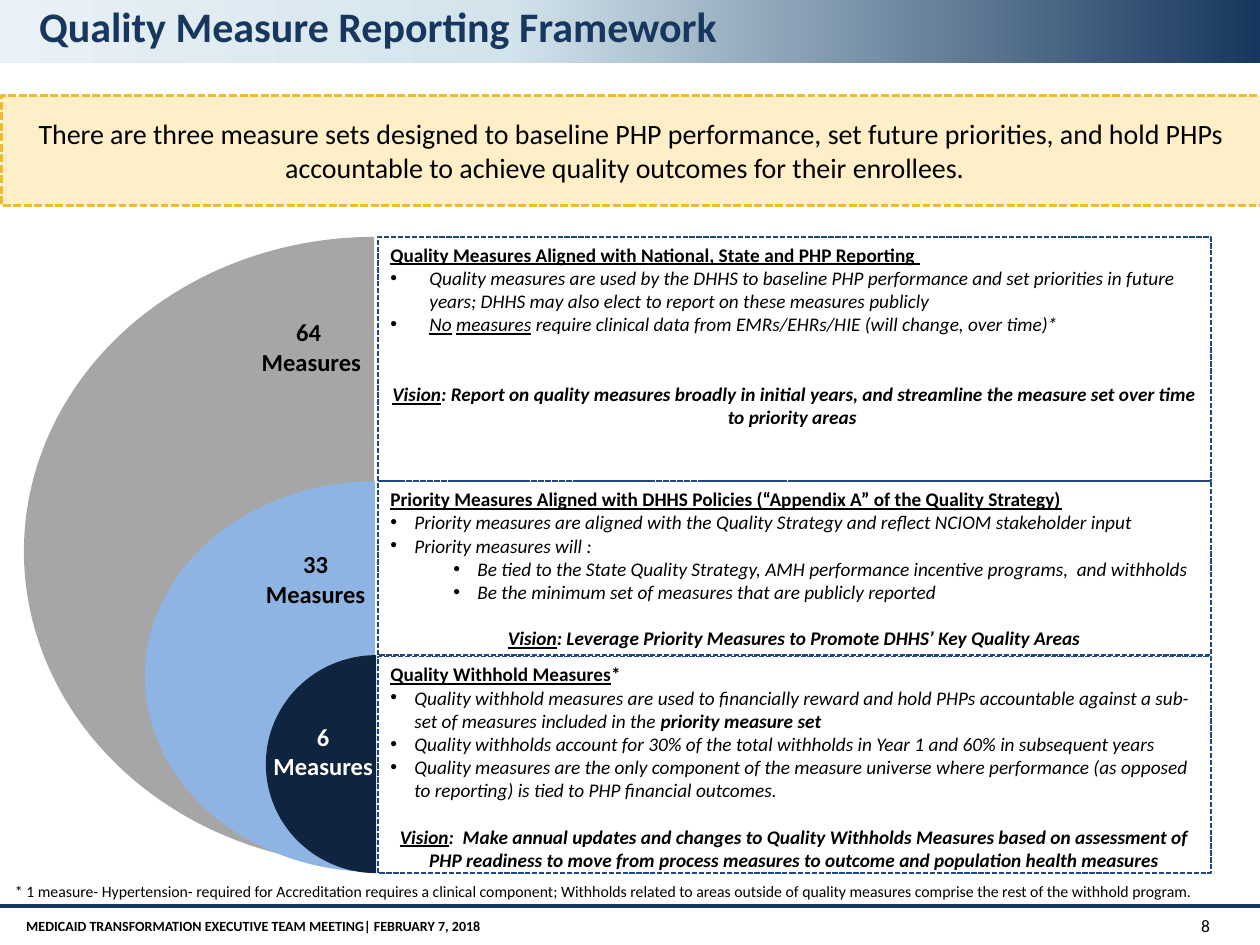
import copy

import pptx
import pptx.dml.color
import pptx.enum.dml
import pptx.enum.shapes
import pptx.enum.text
import pptx.oxml
import pptx.oxml.ns
import pptx.util
from pptx.util import Inches

SHAPE = pptx.enum.shapes.MSO_SHAPE
ALIGN = pptx.enum.text.PP_ALIGN
ANCHOR = pptx.enum.text.MSO_ANCHOR
DASH = pptx.enum.dml.MSO_LINE.SQUARE_DOT  # written as sysDash
qn = pptx.oxml.ns.qn

COLORS = {
    "navy": "17375E", "pale": "D3E4ED", "mist": "E9F1F6",
    "gray": "A6A6A6", "sky": "8EB4E3", "midnight": "0F243E",
    "frame": "1F497D", "cream": "FFEFC9", "gold": "EFBB2F",
    "black": "000000", "white": "FFFFFF",
}
LINE_HEIGHT = 13.4  # points taken by one line of 11 point text
SHALLOW, DEEP = 0.19, 0.31  # hanging indents of the bullets
PANEL_LEFT, PANEL_WIDTH = 3, 6.61

# Each paragraph: its runs as (text, style letters b, i, u), then its format.
BROAD_SET = [
    ([("Quality Measures Aligned with National, State and PHP Reporting ", "bu")], {}),
    ([("Quality measures are used by the DHHS to baseline PHP performance and set "
       "priorities in future years; DHHS may also elect to report on these measures "
       "publicly", "i")], {"indent": DEEP, "hang": DEEP}),
    ([("No", "iu"), (" ", "i"), ("measures", "iu"),
      (" require clinical data from EMRs/EHRs/HIE (will change, over time)*", "i")],
     {"indent": DEEP, "hang": DEEP}),
    ([("Vision", "biu"),
      (": Report on quality measures broadly in initial years, and streamline the "
       "measure set over time to priority areas ", "bi")],
     {"align": ALIGN.CENTER, "before": 2 * LINE_HEIGHT}),
]
PRIORITY_SET = [
    ([("Priority Measures Aligned with DHHS Policies (“Appendix A” of the Quality "
       "Strategy)", "bu")], {}),
    ([("Priority measures are aligned with the Quality Strategy and reflect NCIOM "
       "stakeholder input", "i")], {"indent": SHALLOW, "hang": SHALLOW}),
    ([("Priority measures will :", "i")], {"indent": SHALLOW, "hang": SHALLOW}),
    ([("Be tied to the State Quality Strategy, AMH performance incentive programs,  "
       "and withholds", "i")], {"level": 1, "indent": 0.69, "hang": SHALLOW}),
    ([("Be the minimum set of measures that are publicly reported", "i")],
     {"level": 1, "indent": 0.69, "hang": SHALLOW}),
    ([("Vision", "biu"),
      (": Leverage Priority Measures to Promote DHHS’ Key Quality Areas", "bi")],
     {"align": ALIGN.CENTER, "before": LINE_HEIGHT}),
]
WITHHOLD_SET = [
    ([("Quality Withhold Measures", "bu"), ("*", "b")], {}),
    ([("Quality withhold measures are used to financially reward and hold PHPs "
       "accountable against a sub-set of measures included in the ", "i"),
      ("priority measure set", "bi")], {"indent": SHALLOW, "hang": SHALLOW}),
    ([("Quality withholds account for 30% of the total withholds in Year 1 and 60% in "
       "subsequent years", "i")], {"indent": SHALLOW, "hang": SHALLOW}),
    ([("Quality measures are the only component of the measure universe where "
       "performance (as opposed to reporting) is tied to PHP financial outcomes.", "i")],
     {"indent": SHALLOW, "hang": SHALLOW}),
    ([("Vision", "biu"),
      (":  Make annual updates and changes to Quality Withholds Measures based on "
       "assessment of PHP readiness to move from process measures to outcome and "
       "population health measures", "bi")],
     {"align": ALIGN.CENTER, "before": LINE_HEIGHT}),
]


def rgb(name):
    return pptx.dml.color.RGBColor.from_string(COLORS[name])


def inches(box):
    return [Inches(length) for length in box]


def write(frame, runs, size=11, color="black", style="", align=ALIGN.LEFT,
          level=0, indent=0, hang=0, bullet="•", before=0, spacing=None):
    """Add one paragraph; runs is a string or a list of (text, style letters)."""
    paragraph = frame.paragraphs[0] if not frame.text else frame.add_paragraph()
    paragraph.alignment, paragraph.level = align, level
    paragraph.space_before = pptx.util.Pt(before)
    if spacing:
        paragraph.line_spacing = spacing
    if hang:
        properties = paragraph._p.get_or_add_pPr()
        properties.set("marL", str(Inches(indent)))
        properties.set("indent", str(-Inches(hang)))
        if bullet:
            font = pptx.oxml.parse_xml(
                f'<a:buFont {pptx.oxml.ns.nsdecls("a")} typeface="Arial"/>')
            mark = pptx.oxml.parse_xml(
                f'<a:buChar {pptx.oxml.ns.nsdecls("a")} char="{bullet}"/>')
            properties.extend([font, mark])
    for text, letters in [(runs, style)] if isinstance(runs, str) else runs:
        run = paragraph.add_run()
        run.text = text
        run.font.name, run.font.size = "Calibri", pptx.util.Pt(size)
        run.font.color.rgb = rgb(color)
        run.font.bold, run.font.italic = "b" in letters, "i" in letters
        run.font.underline = "u" in letters


def add_shape(slide, kind, box, fill=None, line=None, width=1):
    shape = slide.shapes.add_shape(kind, *inches(box))
    shape.shadow.inherit = False
    if fill:
        shape.fill.solid()
        shape.fill.fore_color.rgb = rgb(fill)
    else:
        shape.fill.background()
    if line:
        shape.line.color.rgb = rgb(line)
        shape.line.width = pptx.util.Pt(width)
        shape.line.dash_style = DASH
    else:
        shape.line.fill.background()
    return shape


def add_text(slide, box, paragraphs, anchor=ANCHOR.TOP, **text_format):
    frame = slide.shapes.add_textbox(*inches(box)).text_frame
    frame.word_wrap = True
    frame.vertical_anchor = anchor
    for text in paragraphs:
        write(frame, text, **text_format)


def add_header(slide, box):
    band = add_shape(slide, SHAPE.RECTANGLE, box)
    band.fill.gradient()
    stop_list = band._element.spPr.find(".//" + qn("a:gsLst"))
    stop_list.append(copy.deepcopy(stop_list[-1]))
    for stop, position, color in zip(band.fill.gradient_stops, (0, 0.6, 1),
                                     ("navy", "pale", "mist")):
        stop.position, stop.color.rgb = position, rgb(color)
    band.fill.gradient_angle = 180

    left, top, _, height = box
    title = slide.shapes.title
    title.left, title.top, title.width, title.height = inches(
        (left + 0.21, top, 8.58, height - 0.01))
    title.text_frame.auto_size = pptx.enum.text.MSO_AUTO_SIZE.NONE
    title.text_frame.vertical_anchor = ANCHOR.TOP
    write(title.text_frame, "Quality Measure Reporting Framework",
          size=24, color="navy", style="b", spacing=0.9)
    band._element.addnext(title._element)  # title in front of the band


def add_banner(slide, box):
    frame = add_shape(slide, SHAPE.RECTANGLE, box, "cream", "gold", 1.5).text_frame
    frame.word_wrap = True
    frame.vertical_anchor = ANCHOR.MIDDLE
    frame.margin_left = frame.margin_right = Inches(0.11)
    frame.margin_top = frame.margin_bottom = Inches(0.06)
    write(frame, "There are three measure sets designed to baseline PHP performance, "
          "set future priorities, and hold PHPs accountable to achieve quality outcomes "
          "for their enrollees.  ", size=16, align=ALIGN.CENTER)


def add_half_disc(slide, box, fill):
    disc = add_shape(slide, SHAPE.PIE, box, fill)
    disc.adjustments[0], disc.adjustments[1] = 54, 162  # 90 to 270 degrees


def add_panel(slide, box, paragraphs):
    frame = add_shape(slide, SHAPE.RECTANGLE, box, line="frame").text_frame
    frame.word_wrap = True
    frame.vertical_anchor = ANCHOR.TOP
    for runs, text_format in paragraphs:
        write(frame, runs, **text_format)


def add_footer(slide, box):
    left, top, width, height = box
    rule = slide.shapes.add_connector(
        pptx.enum.shapes.MSO_CONNECTOR.STRAIGHT,
        *inches((left, top, left + width, top)))
    rule.line.color.rgb = rgb("navy")
    rule.line.width = pptx.util.Pt(2.25)
    rule._element.spPr.append(pptx.oxml.parse_xml(
        f'<a:effectLst {pptx.oxml.ns.nsdecls("a")}/>'))
    add_text(slide, (left + 0.11, top, 8.4, height),
             ["MEDICAID TRANSFORMATION EXECUTIVE TEAM MEETING| FEBRUARY 7, 2018"],
             ANCHOR.MIDDLE, size=8, style="b")
    add_text(slide, (left + 9.08, top, 0.62, height), ["8"],
             ANCHOR.MIDDLE, size=10, align=ALIGN.RIGHT)


def main():
    deck = pptx.Presentation()
    deck.slide_width, deck.slide_height = Inches(10), Inches(7.5)
    slide = deck.slides.add_slide(deck.slide_layouts[5])

    add_header(slide, (0, 0, 10, 0.5))
    add_banner(slide, (0.01, 0.76, 10, 0.87))
    measure_sets = [
        # disc, disc colour, panel top and height, panel text, label box, label, colour
        ((0.19, 1.88, 5.56, 4.99), "gray", 1.88, 1.94, BROAD_SET,
         (1.83, 2.47, 1.24, 0.57), ["64", " Measures"], "black"),
        ((1.15, 3.82, 3.65, 3.1), "sky", 3.82, 1.38, PRIORITY_SET,
         (1.95, 4.31, 1.11, 0.57), ["33 Measures"], "black"),
        ((2.11, 5.2, 1.75, 1.73), "midnight", 5.21, 1.72, WITHHOLD_SET,
         (2.07, 5.68, 0.99, 0.57), ["6 Measures"], "white"),
    ]
    for disc, fill, top, height, details, label_box, label, color in measure_sets:
        add_half_disc(slide, disc, fill)
        add_panel(slide, (PANEL_LEFT, top, PANEL_WIDTH, height), details)
        add_text(slide, label_box, label, size=14, color=color, style="b",
                 align=ALIGN.CENTER)
    add_text(slide, (0.02, 6.95, 9.62, 0.25),
             ["* 1 measure- Hypertension- required for Accreditation requires a clinical "
              "component; Withholds related to areas outside of quality measures comprise "
              "the rest of the withhold program."],
             size=9, indent=0.12, hang=0.12, bullet=None)
    add_footer(slide, (0, 7.19, 10, 0.31))
    deck.save("out.pptx")


if __name__ == "__main__":
    main()
